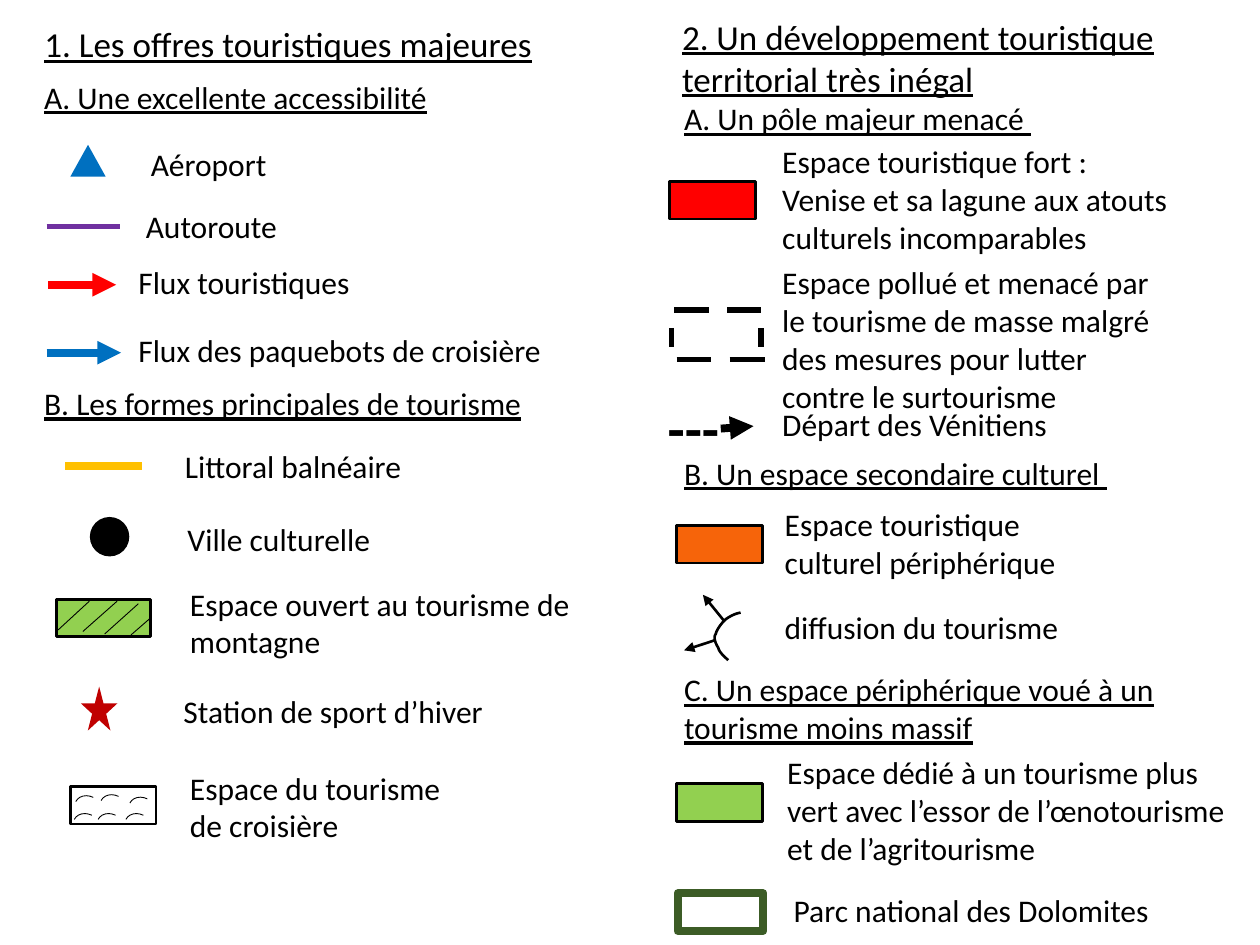
from dataclasses import dataclass

from lxml.etree import SubElement
from pptx import Presentation
from pptx.dml.color import RGBColor
from pptx.enum.shapes import MSO_CONNECTOR, MSO_SHAPE
from pptx.enum.text import MSO_ANCHOR, MSO_AUTO_SIZE, PP_ALIGN
from pptx.oxml.ns import qn
from pptx.util import Cm, Pt


@dataclass(frozen=True)
class Theme:
    """Colours, type sizes and line widths of the legend."""
    font: str = "Calibri"
    head: int = 20
    body: int = 18
    dash: int = 32
    thin: float = 0.5
    edge: float = 1.5
    mid: float = 3
    bold: float = 4.5
    black: str = "000000"
    red: str = "FF0000"
    blue: str = "0070C0"
    purple: str = "7030A0"
    gold: str = "FFC000"
    green: str = "92D050"
    star: str = "C00000"
    orange: str = "F6640A"
    forest: str = "3C5C26"


@dataclass(frozen=True)
class Box:
    """A region of the slide, with its origin in centimetres."""
    slide: object
    left: float
    top: float

    def spot(self, x, y):
        """Return a point of the region as slide lengths."""
        return Cm(self.left + x), Cm(self.top + y)

    def inner(self, x, y):
        """Return a region placed inside this one."""
        return Box(self.slide, self.left + x, self.top + y)


T = Theme()
SWATCH = (1.73, 0.76)


def style(frame, text, size, under=False, bold=False):
    """Fill a text frame and format its runs."""
    frame.word_wrap = True
    frame.auto_size = MSO_AUTO_SIZE.SHAPE_TO_FIT_TEXT
    frame.vertical_anchor = MSO_ANCHOR.TOP
    frame.text = text
    for para in frame.paragraphs:
        para.alignment = PP_ALIGN.LEFT
        for run in para.runs:
            font = run.font
            font.name, font.size = T.font, Pt(size)
            font.underline, font.bold = under, bold
            font.color.rgb = RGBColor.from_string(T.black)


def label(box, text, x, y, w, h=1.02, size=T.body, under=False, bold=False):
    """Add a text box to a region."""
    shape = box.slide.shapes.add_textbox(*box.spot(x, y), Cm(w), Cm(h))
    style(shape.text_frame, text, size, under, bold)


def paint(shape, fill=None, line=None, width=T.edge):
    """Set the fill and outline of a shape."""
    shape.shadow.inherit = False
    if fill:
        shape.fill.solid()
        shape.fill.fore_color.rgb = RGBColor.from_string(fill)
    else:
        shape.fill.background()
    if line:
        shape.line.color.rgb = RGBColor.from_string(line)
        shape.line.width = Pt(width)
    else:
        shape.line.fill.background()


def mark(box, kind, x, y, w, h, **look):
    """Add a preset shape to a region and return it."""
    shape = box.slide.shapes.add_shape(kind, *box.spot(x, y), Cm(w), Cm(h))
    paint(shape, **look)
    return shape


def stroke(box, x1, y1, x2, y2, hue=T.black, width=T.edge, arrow=False):
    """Add a straight line or an arrow to a region."""
    line = box.slide.shapes.add_connector(
        MSO_CONNECTOR.STRAIGHT, *box.spot(x1, y1), *box.spot(x2, y2))
    line.line.color.rgb = RGBColor.from_string(hue)
    line.line.width = Pt(width)
    props = line._element.spPr
    if arrow:
        SubElement(props.find(qn("a:ln")), qn("a:tailEnd"), type="triangle")
    SubElement(props, qn("a:effectLst"))


def hatch(box):
    """Draw the hatched mountain swatch."""
    mark(box, MSO_SHAPE.RECTANGLE, 0, 0, 1.9, 0.74, fill=T.green, line=T.black)
    for ends in ((0.03, 0.61, 0.66, 0.03), (0.53, 0.64, 1.22, 0.03),
                 (0.97, 0.69, 1.65, 0.08), (1.5, 0.71, 1.88, 0.38)):
        stroke(box, *ends, width=T.thin)


def waves(box):
    """Draw the cruise swatch with its small waves."""
    mark(box, MSO_SHAPE.RECTANGLE, 0, 0, *SWATCH, line=T.black)
    for x, y in ((0.13, 0.15), (0.64, 0.13), (1.22, 0.18),
                 (0.1, 0.51), (0.58, 0.51), (1.14, 0.51)):
        arc = mark(box, MSO_SHAPE.ARC, x, y, 0.46, 0.56,
                   line=T.black, width=T.thin)
        arc.rotation = 296


def frame(box):
    """Draw the dashed frame of the polluted area."""
    for ends in ((0.05, 0, 0.76, 0), (1.12, 0, 1.8, 0),
                 (0.1, 0.99, 0.79, 0.99), (1.17, 0.99, 1.88, 0.99),
                 (1.8, 0.74, 1.8, 0.36), (0, 0.36, 0, 0.74)):
        stroke(box, *ends, width=T.mid)


def bend(a, b, c, d, steps=8):
    """Return points along a cubic curve, after its start."""
    return [tuple((1 - t) ** 3 * p + 3 * t * (1 - t) ** 2 * q
                  + 3 * t * t * (1 - t) * r + t ** 3 * s
                  for p, q, r, s in zip(a, b, c, d))
            for t in (i / steps for i in range(1, steps + 1))]


def spread(box):
    """Draw the curved front with its two arrows."""
    knots = ((1.14, 0.36), (1.04, 0.38), (0.97, 0.41), (0.86, 0.48),
             (0.79, 0.53), (0.66, 0.69), (0.64, 0.79), (0.58, 0.86),
             (0.64, 0.99), (0.69, 1.07), (0.71, 1.17), (0.84, 1.27),
             (0.89, 1.32))
    path = [p for i in range(0, 12, 3) for p in bend(*knots[i:i + 4])]
    pen = box.slide.shapes.build_freeform(*box.spot(*knots[0]))
    pen.add_line_segments([box.spot(*p) for p in path], close=False)
    paint(pen.convert_to_shape(), line=T.black)
    stroke(box, 0.81, 0.53, 0.38, 0, arrow=True)
    stroke(box, 0.64, 0.91, 0, 1.12, arrow=True)


def offers(box):
    """Build the left column, on what is offered to tourists."""
    title = box.slide.shapes.title
    title.left, title.top = box.spot(0, 0)
    title.width, title.height = Cm(10.69), Cm(1.12)
    style(title.text_frame, "1. Les offres touristiques majeures", T.head, True)
    label(box, "A. Une excellente accessibilité", 0, 1.12, 9.58, under=True)
    label(box, "B. Les formes principales de tourisme", 0, 7.29, 11.2, under=True)
    for row in (("Aéroport", 2.15, 2.46, 6.07),
                ("Autoroute", 2.05, 3.71, 6.07),
                ("Flux touristiques", 1.9, 4.85, 6.07),
                ("Flux des paquebots de croisière", 1.9, 6.22, 8.79),
                ("Littoral balnéaire", 2.84, 8.56, 6.07),
                ("Ville culturelle", 2.89, 10.03, 6.76),
                ("Espace ouvert au tourisme de montagne", 2.94, 11.33, 8.36, 1.8),
                ("Station de sport d’hiver", 2.81, 13.49, 6.76),
                ("Espace du tourisme de croisière", 2.94, 15.04, 6.07, 1.8)):
        label(box, *row)
    mark(box, MSO_SHAPE.ISOSCELES_TRIANGLE, 0.78, 2.59, 0.71, 0.64, fill=T.blue)
    stroke(box, 0.3, 4.24, 1.77, 4.24, T.purple, T.mid)
    stroke(box, 0.33, 5.41, 1.7, 5.41, T.red, T.bold, True)
    stroke(box, 0.3, 6.78, 1.8, 6.78, T.blue, T.bold, True)
    stroke(box, 0.68, 9.07, 2.23, 9.07, T.gold, T.bold)
    mark(box, MSO_SHAPE.OVAL, 1.19, 10.11, 0.76, 0.76,
         fill=T.black, line=T.black, width=1)
    hatch(box.inner(0.5, 11.76))
    mark(box, MSO_SHAPE.STAR_5_POINT, 0.99, 13.51, 0.74, 0.89, fill=T.star)
    waves(box.inner(0.78, 15.52))


def growth(box):
    """Build the right column, on uneven growth."""
    label(box, "2. Un développement touristique territorial très inégal",
          0, 0, 10.69, 1.96, T.head, True)
    for row in (("A. Un pôle majeur menacé ", 0.04, 1.7, 9.58),
                ("B. Un espace secondaire culturel ", 0.04, 8.84, 11.2),
                ("C. Un espace périphérique voué à un tourisme moins massif",
                 0.04, 13.21, 11.2, 1.8)):
        label(box, *row, under=True)
    for row in (("Espace touristique fort :\nVenise et sa lagune aux atouts "
                 "culturels incomparables", 2.02, 2.56, 9.58, 2.57),
                ("Espace pollué et menacé par le tourisme de masse malgré des "
                 "mesures pour lutter contre le surtourisme",
                 2.02, 5, 7.92, 3.33),
                ("Départ des Vénitiens", 2.02, 7.87, 7.92),
                ("Espace touristique culturel périphérique",
                 2.07, 9.88, 6.76, 1.8),
                ("diffusion du tourisme", 2.07, 11.96, 8.59),
                ("Espace dédié à un tourisme plus vert avec l’essor de "
                 "l’œnotourisme et de l’agritourisme", 2.12, 14.88, 9.58, 2.57),
                ("Parc national des Dolomites", 2.25, 17.65, 7.82)):
        label(box, *row)
    for x, y, fill, line, width in ((0, 3.48, T.red, T.black, T.edge),
                                    (0.14, 10.41, T.orange, T.black, T.edge),
                                    (0.14, 15.62, T.green, T.black, T.edge),
                                    (0.16, 17.83, None, T.forest, T.bold)):
        mark(box, MSO_SHAPE.RECTANGLE, x, y, *SWATCH,
             fill=fill, line=line, width=width)
    frame(box.inner(0.04, 6.07))
    stroke(box, 1.03, 8.46, 1.69, 8.41, width=T.bold, arrow=True)
    label(box, "---", -0.29, 7.62, 2.13, 1.63, T.dash, bold=True)
    spread(box.inner(0.29, 11.81))


def main():
    """Build the legend slide and save it."""
    deck = Presentation()
    deck.slide_width, deck.slide_height = Cm(25.4), Cm(19.05)
    slide = deck.slides.add_slide(deck.slide_layouts.get_by_name("Title Only"))
    offers(Box(slide, 0.64, 0.33))
    growth(Box(slide, 13.5, 0.18))
    deck.save("out.pptx")


if __name__ == "__main__":
    main()
